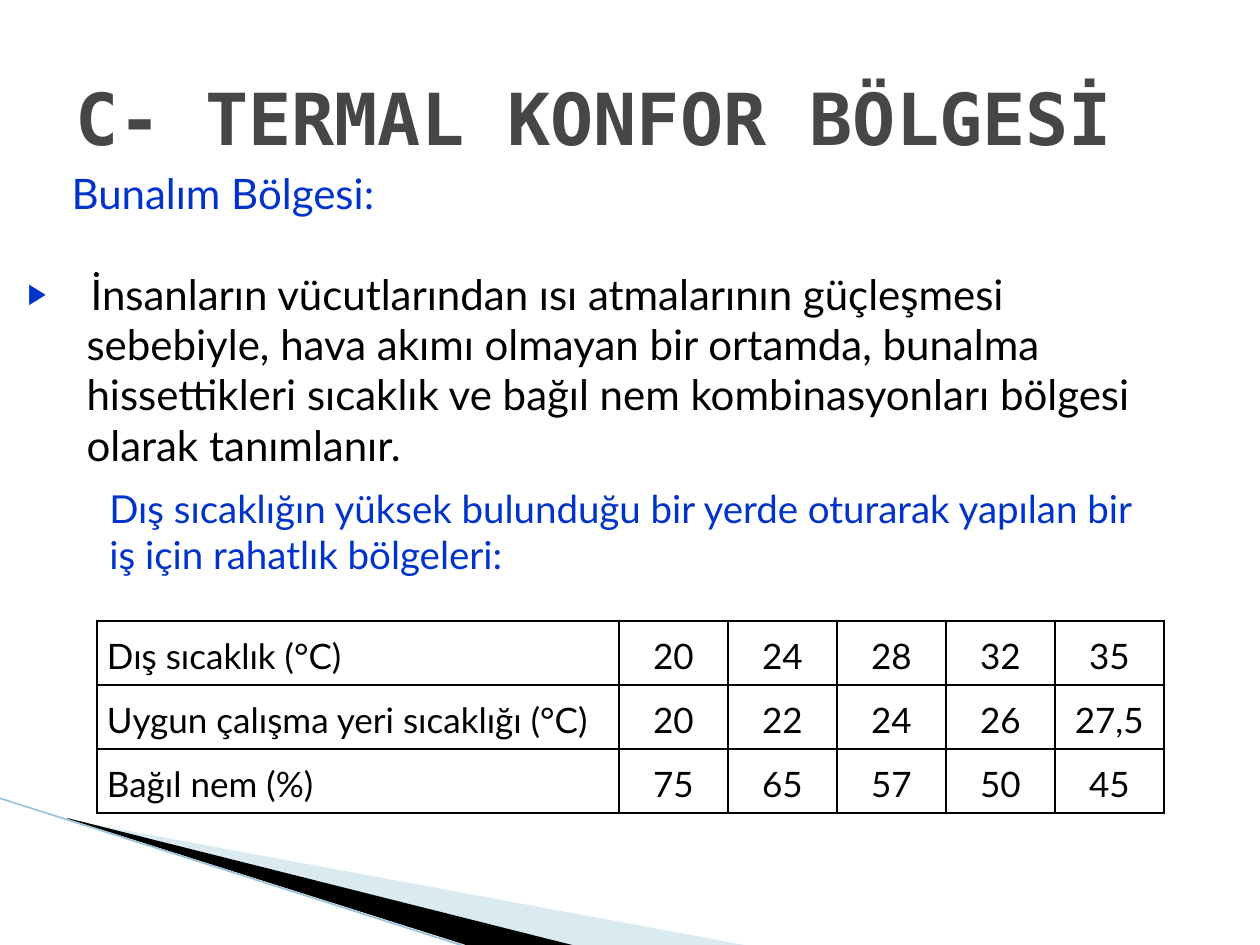
"""Build the thermal comfort zone slide."""
from dataclasses import dataclass

import pptx
import pptx.dml.color
import pptx.enum.shapes
import pptx.enum.text
import pptx.oxml
import pptx.oxml.ns
import pptx.util
from lxml import etree

SCALE = 914400 / 126
COLORS = {"title": "464646", "accent": "0033CC", "text": "000000",
          "pale": "A0CBDC", "edge": "97C5D8"}
FONT = "Lato"
TITLE_FONT = "DejaVu Sans Mono"
ALIGN = pptx.enum.text.PP_ALIGN
ANCHOR = pptx.enum.text.MSO_ANCHOR


@dataclass
class Wedge:
    points: list[tuple[int, int]]
    color: str
    alpha: int = 100


@dataclass
class Para:
    text: str
    color: str
    left: int = 0
    before: float = 0
    bullet: str = ""


WEDGES = [
    Wedge([(69, 820), (750, 946), (575, 946), (69, 819)], "pale", 40),
    Wedge([(67, 818), (576, 946), (469, 946), (68, 819)], "text"),
]
BODY = [
    Para("Bunalım Bölgesi:", "accent", left=44),
    Para("İnsanların vücutlarından ısı atmalarının güçleşmesi", "text",
         left=63, before=28.8, bullet="▶"),
    Para("sebebiyle, hava akımı olmayan bir ortamda, bunalma hissettikleri "
         "sıcaklık ve bağıl nem kombinasyonları bölgesi olarak tanımlanır.",
         "text", left=59),
]
ROWS = [
    ["Dış sıcaklık (°C)", "20", "24", "28", "32", "35"],
    ["Uygun çalışma yeri sıcaklığı (°C)", "20", "22", "24", "26", "27,5"],
    ["Bağıl nem (%)", "75", "65", "57", "50", "45"],
]
COLUMNS = [522] + [109] * 5
ROW_HEIGHT = 64


def px(n: int) -> pptx.util.Emu:
    return pptx.util.Emu(round(n * SCALE))


def rgb(name: str) -> pptx.dml.color.RGBColor:
    return pptx.dml.color.RGBColor.from_string(COLORS[name])


def sub(parent, tag: str, **attrs: str):
    el = etree.SubElement(parent, pptx.oxml.ns.qn(tag))
    for key, value in attrs.items():
        el.set(key, value)
    return el


def place(sp, x: int, y: int, w: int, h: int) -> None:
    sp.left, sp.top, sp.width, sp.height = px(x), px(y), px(w), px(h)


def add_run(p, text: str, size: int, color: str, font: str = FONT,
            bold: bool = False) -> None:
    r = p.add_run()
    r.text = text
    r.font.size = pptx.util.Pt(size)
    r.font.name = font
    r.font.bold = bold
    r.font.color.rgb = rgb(color)


def add_wedge(s, wedge: Wedge):
    builder = s.shapes.build_freeform(*wedge.points[0], scale=SCALE)
    builder.add_line_segments(wedge.points[1:], close=True)
    sp = builder.convert_to_shape()
    sp.shadow.inherit = False
    sp.fill.solid()
    sp.fill.fore_color.rgb = rgb(wedge.color)
    sp.line.fill.background()
    if wedge.alpha < 100:
        fill = sp.element.spPr.find(".//" + pptx.oxml.ns.qn("a:srgbClr"))
        sub(fill, "a:alpha", val=str(wedge.alpha * 1000))
    return sp


def add_edge(s):
    line = s.shapes.add_connector(pptx.enum.shapes.MSO_CONNECTOR.STRAIGHT,
                                  px(-1), px(798), px(467), px(947))
    line.line.color.rgb = rgb("edge")
    line.line.width = pptx.util.Pt(0.95)
    sub(line.element.spPr, "a:effectLst")
    return line


def fill_body(tf, paras: list[Para]) -> None:
    for i, para in enumerate(paras):
        p = tf.paragraphs[0] if i == 0 else tf.add_paragraph()
        p.space_before = pptx.util.Pt(para.before)
        pPr = p._p.get_or_add_pPr()
        pPr.set("marL", str(px(para.left)))
        pPr.set("indent", str(px(-para.left if para.bullet else 0)))
        if para.bullet:
            sub(sub(pPr, "a:buClr"), "a:srgbClr", val=COLORS["accent"])
            sub(pPr, "a:buSzPct", val="68000")
            sub(pPr, "a:buChar", char=para.bullet)
        else:
            sub(pPr, "a:buNone")
        add_run(p, para.text, 24, para.color)


def format_cell(cell, text: str, centered: bool) -> None:
    cell.margin_left = cell.margin_right = px(10)
    cell.margin_top = cell.margin_bottom = 0
    cell.vertical_anchor = ANCHOR.MIDDLE
    p = cell.text_frame.paragraphs[0]
    p.alignment = ALIGN.CENTER if centered else ALIGN.LEFT
    p.line_spacing = 1.15
    add_run(p, text, 20, "text")
    tcPr = cell._tc.get_or_add_tcPr()
    for side in ("a:lnL", "a:lnR", "a:lnT", "a:lnB"):
        border = sub(tcPr, side, w=str(pptx.util.Pt(1)))
        sub(sub(border, "a:solidFill"), "a:srgbClr", val=COLORS["text"])
    cell.fill.background()


def add_grid(s, x: int, y: int) -> None:
    frame = s.shapes.add_table(len(ROWS), len(COLUMNS), px(x), px(y),
                               px(sum(COLUMNS)), px(ROW_HEIGHT * len(ROWS)))
    table = frame.table
    table.first_row = table.horz_banding = False
    for column, width in zip(table.columns, COLUMNS):
        column.width = px(width)
    for i, values in enumerate(ROWS):
        table.rows[i].height = px(ROW_HEIGHT)
        for j, value in enumerate(values):
            format_cell(table.cell(i, j), value, centered=j > 0)


def main() -> None:
    prs = pptx.Presentation()
    prs.slide_width, prs.slide_height = px(1260), px(945)
    s = prs.slides.add_slide(prs.slide_layouts[1])
    title, body = s.shapes.title, s.placeholders[1]

    for sp in [add_wedge(s, wedge) for wedge in WEDGES] + [add_edge(s)]:
        title.element.addprevious(sp.element)

    place(title, 63, 38, 1134, 157)
    tf = title.text_frame
    tf.auto_size = pptx.enum.text.MSO_AUTO_SIZE.NONE
    tf.vertical_anchor = ANCHOR.MIDDLE
    tf.paragraphs[0].alignment = ALIGN.LEFT
    add_run(tf.paragraphs[0], "C- TERMAL KONFOR BÖLGESİ", 41, "title",
            TITLE_FONT, bold=True)

    place(body, 15, 161, 1245, 784)
    body.text_frame.auto_size = pptx.enum.text.MSO_AUTO_SIZE.NONE
    fill_body(body.text_frame, BODY)

    tf = s.shapes.add_textbox(px(97), px(479), px(1067), px(106)).text_frame
    tf.word_wrap = True
    add_run(tf.paragraphs[0], "Dış sıcaklığın yüksek bulunduğu bir yerde "
            "oturarak yapılan bir iş için rahatlık bölgeleri:", 22, "accent")

    add_grid(s, 97, 621)
    prs.save("out.pptx")


if __name__ == "__main__":
    main()
